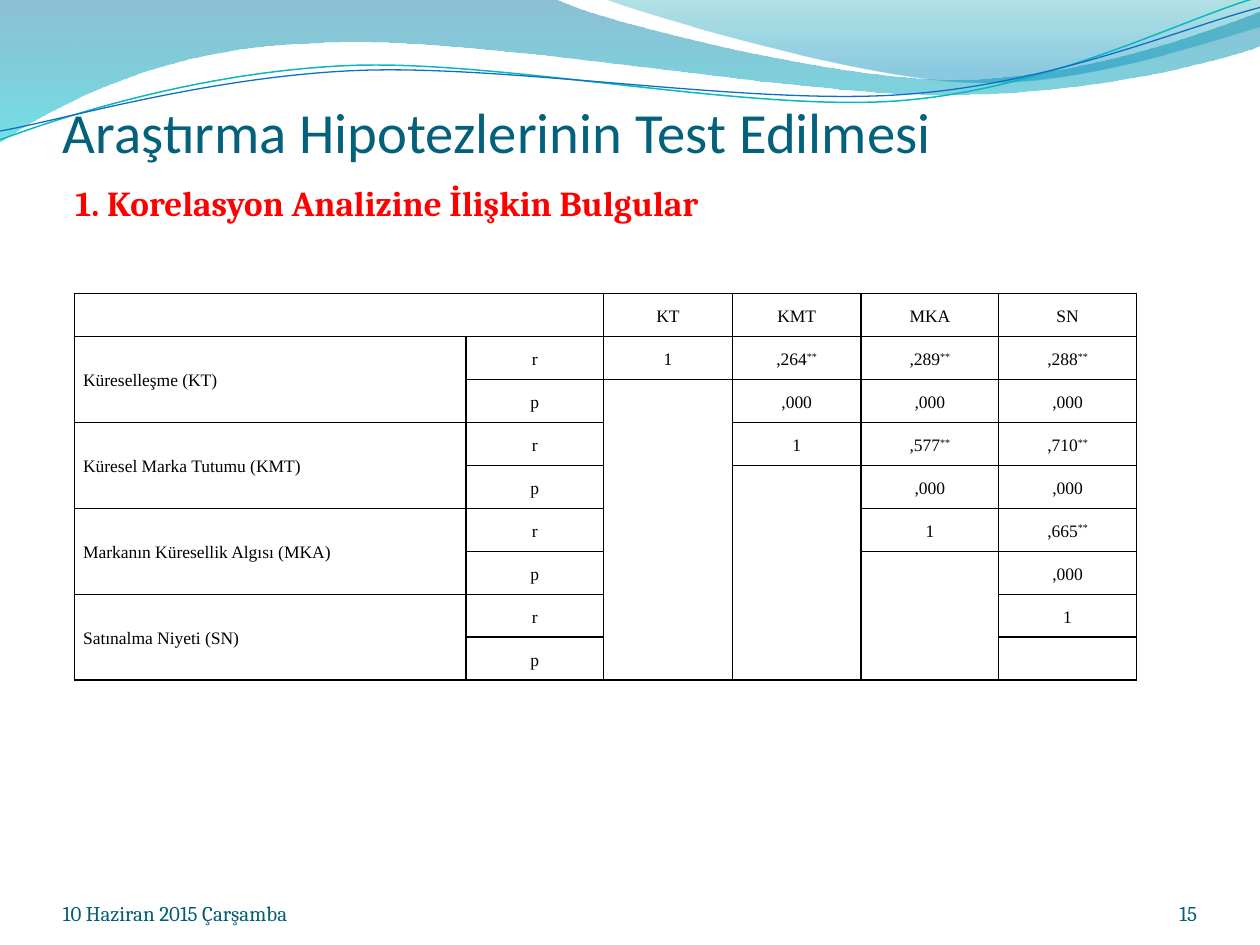
from math import cos, radians, sin

from lxml.etree import SubElement
from pptx import Presentation
from pptx.dml.color import RGBColor
from pptx.enum.text import MSO_ANCHOR, PP_ALIGN
from pptx.oxml.ns import qn
from pptx.util import Inches, Pt

TITLE_TEAL = RGBColor(0x04, 0x61, 0x7B)
FOOTER_TEAL = RGBColor(0x04, 0x5D, 0x75)
RED = RGBColor(0xFF, 0x00, 0x00)
BLACK = RGBColor(0x00, 0x00, 0x00)
DEEP_BLUE = RGBColor(0x00, 0x74, 0xA1)
TURQUOISE = RGBColor(0x00, 0xC6, 0xCF)
SEA_GREEN = RGBColor(0x00, 0xA1, 0xA9)
SKY_BLUE = RGBColor(0x00, 0x8B, 0xBF)
LINE_TEAL = RGBColor(0x0A, 0xB8, 0xBF)
LINE_BLUE = RGBColor(0x0F, 0x6F, 0xC6)

STRAND_TILT = 2.7
VARIABLES = [
    ("Küreselleşme (KT)", "KT", ["1", ",264", ",289", ",288"]),
    ("Küresel Marka Tutumu (KMT)", "KMT", ["1", ",577", ",710"]),
    ("Markanın Küresellik Algısı (MKA)", "MKA", ["1", ",665"]),
    ("Satınalma Niyeti (SN)", "SN", ["1"]),
]
SIGNIFICANCE = ",000"
COLUMN_WIDTHS = [3.1, 1.09, 1.02, 1.02, 1.09, 1.09]


def add_outline(slide, left, top, start, segments, closed, tilt=0, center=(0, 0)):
    knots = [start]
    for segment in segments:
        knots.extend(zip(segment[::2], segment[1::2]))
    turn, points = radians(tilt), []
    for x, y in knots:
        dx, dy = x - center[0], y - center[1]
        points.append((Inches(left + center[0] + dx * cos(turn) - dy * sin(turn)),
                       Inches(top + center[1] + dx * sin(turn) + dy * cos(turn))))
    builder = slide.shapes.build_freeform(*points[0])
    builder.add_line_segments(points[1:], close=closed)
    outline = builder.convert_to_shape()
    outline.shadow.inherit = False
    outline.rotation = -tilt

    lines = iter(list(outline.element.iter(qn("a:lnTo"))))
    for segment in segments:
        first = next(lines)
        if len(segment) == 6:
            first.tag = qn("a:cubicBezTo")
            for follower in (next(lines), next(lines)):
                first.append(follower[0])
                follower.getparent().remove(follower)
    return outline


def add_wave(slide, left, top, start, segments, stops):
    wave = add_outline(slide, left, top, start, segments, True)
    wave.line.fill.background()
    wave.fill.gradient()
    wave.fill.gradient_angle = 270
    for stop, (position, color, _) in zip(wave.fill.gradient_stops, stops):
        stop.position = position
        stop.color.rgb = color
    for color_node, (_, _, opacity) in zip(wave.element.spPr.iter(qn("a:srgbClr")), stops):
        SubElement(color_node, qn("a:alpha")).set("val", str(opacity * 1000))


def add_strand(slide, left, top, start, segments, center, color, width):
    strand = add_outline(slide, left, top, start, segments, False, STRAND_TILT, center)
    strand.fill.background()
    strand.line.color.rgb = color
    strand.line.width = Pt(width)


def add_banner(slide, left, top):
    add_wave(slide, left, top, (0, 0), [
        (4.4, -0.01), (4.76, 0.17, 6.64, 0.63, 7.58, 0.63),
        (8.53, 0.63, 9.58, 0.26, 10, 0.09), (10.01, 0.36),
        (9.83, 0.44, 8.7, 0.76, 7.46, 0.75), (6.22, 0.75, 3.82, 0.28, 2.57, 0.34),
        (1.29, 0.36, 0.46, 0.83, -0.01, 1.13), (0, 0),
    ], [(0, DEEP_BLUE, 45), (1, TURQUOISE, 55)])
    add_wave(slide, left, top, (4.79, -0.01), [
        (5.09, 0.11, 6.82, 0.62, 7.69, 0.65), (8.56, 0.69, 9.61, 0.32, 10, 0.21),
        (10, 0), (4.79, -0.01),
    ], [(0, SEA_GREEN, 30), (0.8, SKY_BLUE, 45)])
    add_strand(slide, left, top, (0, 1.11), [
        (0.48, 0.93, 1.58, 0.57, 2.77, 0.52), (3.95, 0.47, 5.93, 0.89, 7.13, 0.8),
        (8.33, 0.71, 9.38, 0.15, 9.98, -0.02),
    ], (4.99, 0.58), LINE_TEAL, 0.85)
    add_strand(slide, left, top, (0, 1.04), [
        (0.47, 0.96, 1.64, 0.61, 2.83, 0.56), (4.03, 0.51, 5.97, 0.84, 7.17, 0.75),
        (8.36, 0.67, 9.41, 0.21, 10, 0.06),
    ], (5, 0.59), LINE_BLUE, 0.75)


def style_run(run, size, font, color, bold=False):
    run.font.size = Pt(size)
    run.font.name = font
    run.font.color.rgb = color
    run.font.bold = bold


def add_text(slide, left, top, width, height, text, size, font, color,
             bold=False, align=PP_ALIGN.LEFT, anchor=MSO_ANCHOR.BOTTOM, insets=(0, 0, 0, 0)):
    frame = slide.shapes.add_textbox(
        Inches(left), Inches(top), Inches(width), Inches(height)).text_frame
    frame.word_wrap = True
    frame.vertical_anchor = anchor
    frame.margin_left, frame.margin_top, frame.margin_right, frame.margin_bottom = map(
        Inches, insets)
    paragraph = frame.paragraphs[0]
    paragraph.text = text
    paragraph.alignment = align
    style_run(paragraph.runs[0], size, font, color, bold)
    return paragraph


def add_headings(slide, left, top, width):
    add_text(slide, left, top, width, 0.54, "Araştırma Hipotezlerinin Test Edilmesi",
             32.4, "Calibri", TITLE_TEAL, align=PP_ALIGN.JUSTIFY, insets=(0, 0.05, 0, 0))
    subtitle = add_text(slide, left, top + 0.62, width, 5.53,
                        "1. Korelasyon Analizine İlişkin Bulgular", 20, "Cambria", RED, True,
                        PP_ALIGN.JUSTIFY, MSO_ANCHOR.TOP, (0.1, 0.05, 0.1, 0.05))
    subtitle.space_before = Pt(4)


def add_footer(slide, left, top, width):
    add_text(slide, left, top, 2.33, 0.4, "10 Haziran 2015 Çarşamba", 12, "Cambria", FOOTER_TEAL)
    add_text(slide, left + width - 0.83, top, 0.83, 0.4, "15", 12, "Cambria", FOOTER_TEAL,
             align=PP_ALIGN.RIGHT)


def format_cell(cell):
    cell.fill.background()
    cell.vertical_anchor = MSO_ANCHOR.MIDDLE
    cell.margin_left = cell.margin_right = Inches(0.07)
    cell.margin_top = cell.margin_bottom = 0
    properties = cell._tc.get_or_add_tcPr()
    for index, side in enumerate(("a:lnL", "a:lnR", "a:lnT", "a:lnB")):
        border = SubElement(properties, qn(side), w=str(Pt(1)))
        color_node = SubElement(SubElement(border, qn("a:solidFill")), qn("a:srgbClr"))
        color_node.set("val", str(BLACK))
        properties.insert(index, border)


def write_cell(cell, text, align=PP_ALIGN.CENTER, indent=0, stars=False):
    paragraph = cell.text_frame.paragraphs[0]
    paragraph.text = text
    paragraph.alignment = align
    paragraph.line_spacing = 1.15
    paragraph.space_after = Pt(6)
    for margin in ("marL", "marR"):
        paragraph._p.get_or_add_pPr().set(margin, str(Inches(indent)))
    if stars:
        marker = paragraph.add_run()
        marker.text = "**"
        marker._r.get_or_add_rPr().set("baseline", "30000")
    for run in paragraph.runs:
        style_run(run, 10, "Times New Roman", BLACK)


def add_correlation_table(slide, left, top, width, height):
    row_count = 1 + 2 * len(VARIABLES)
    table = slide.shapes.add_table(
        row_count, len(COLUMN_WIDTHS),
        Inches(left), Inches(top), Inches(width), Inches(height)).table
    table.first_row = table.horz_banding = False
    for column, share in zip(table.columns, COLUMN_WIDTHS):
        column.width = Inches(width * share / sum(COLUMN_WIDTHS))
    for row in table.rows:
        row.height = Inches(height / row_count)
    for cell in table.iter_cells():
        format_cell(cell)

    table.cell(0, 0).merge(table.cell(0, 1))
    for index, (label, code, coefficients) in enumerate(VARIABLES):
        r_row, p_row, diagonal = 1 + 2 * index, 2 + 2 * index, 2 + index
        write_cell(table.cell(0, diagonal), code)
        table.cell(r_row, 0).merge(table.cell(p_row, 0))
        write_cell(table.cell(r_row, 0), label, PP_ALIGN.LEFT)
        write_cell(table.cell(r_row, 1), "r")
        write_cell(table.cell(p_row, 1), "p")
        for column, coefficient in enumerate(coefficients, diagonal):
            off_diagonal = column > diagonal
            write_cell(table.cell(r_row, column), coefficient, indent=0.04, stars=off_diagonal)
            if off_diagonal:
                write_cell(table.cell(p_row, column), SIGNIFICANCE, indent=0.04)
        if p_row < row_count - 1:
            table.cell(p_row, diagonal).merge(table.cell(row_count - 1, diagonal))


def main():
    presentation = Presentation()
    presentation.slide_width = Inches(10)
    presentation.slide_height = Inches(7.5)
    slide = presentation.slides.add_slide(presentation.slide_layouts[6])
    add_banner(slide, 0, 0)
    add_headings(slide, 0.5, 0.77, 9)
    add_footer(slide, 0.5, 6.95, 9)
    add_correlation_table(slide, 0.59, 2.33, 8.43, 3.07)
    presentation.save("out.pptx")


if __name__ == "__main__":
    main()
